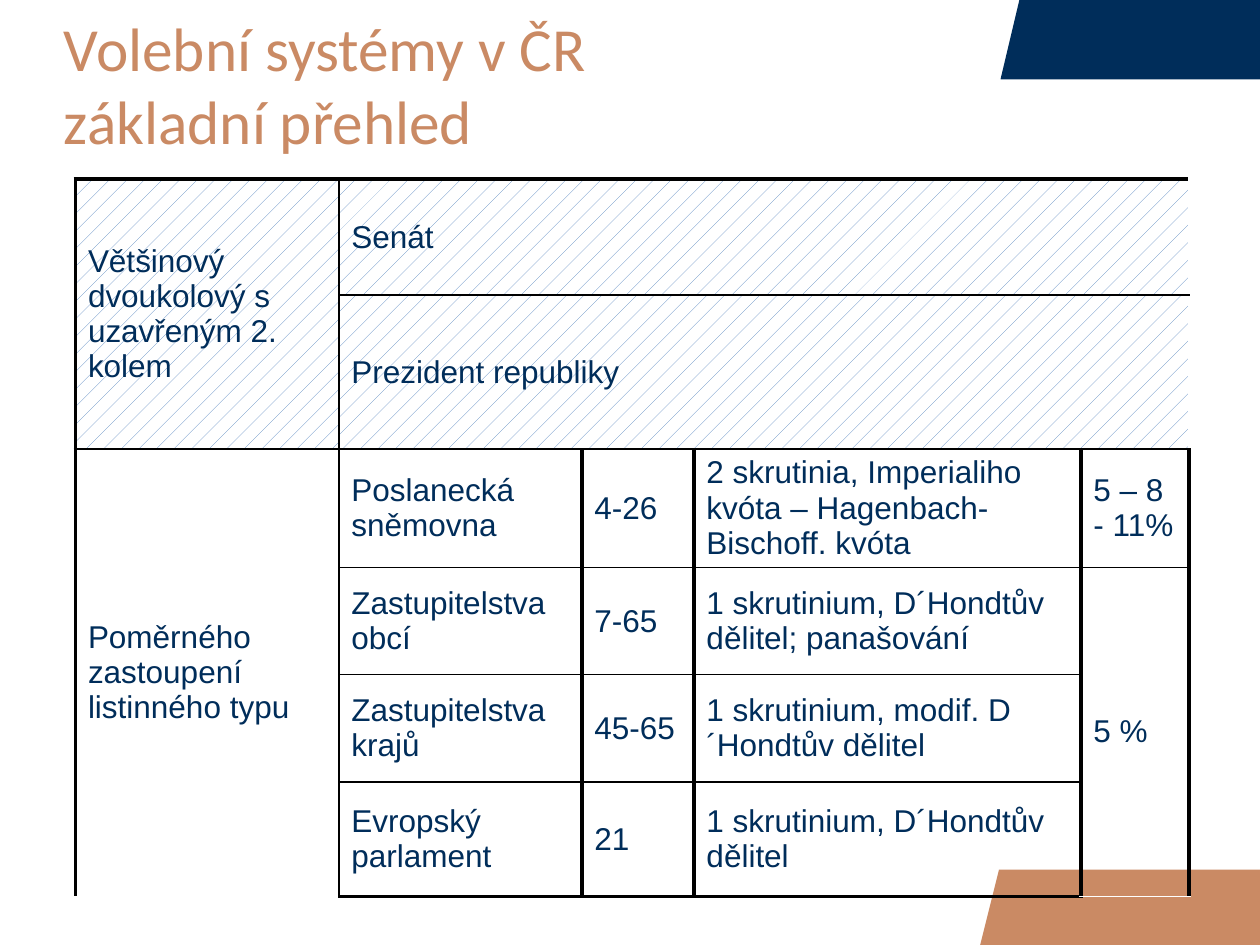
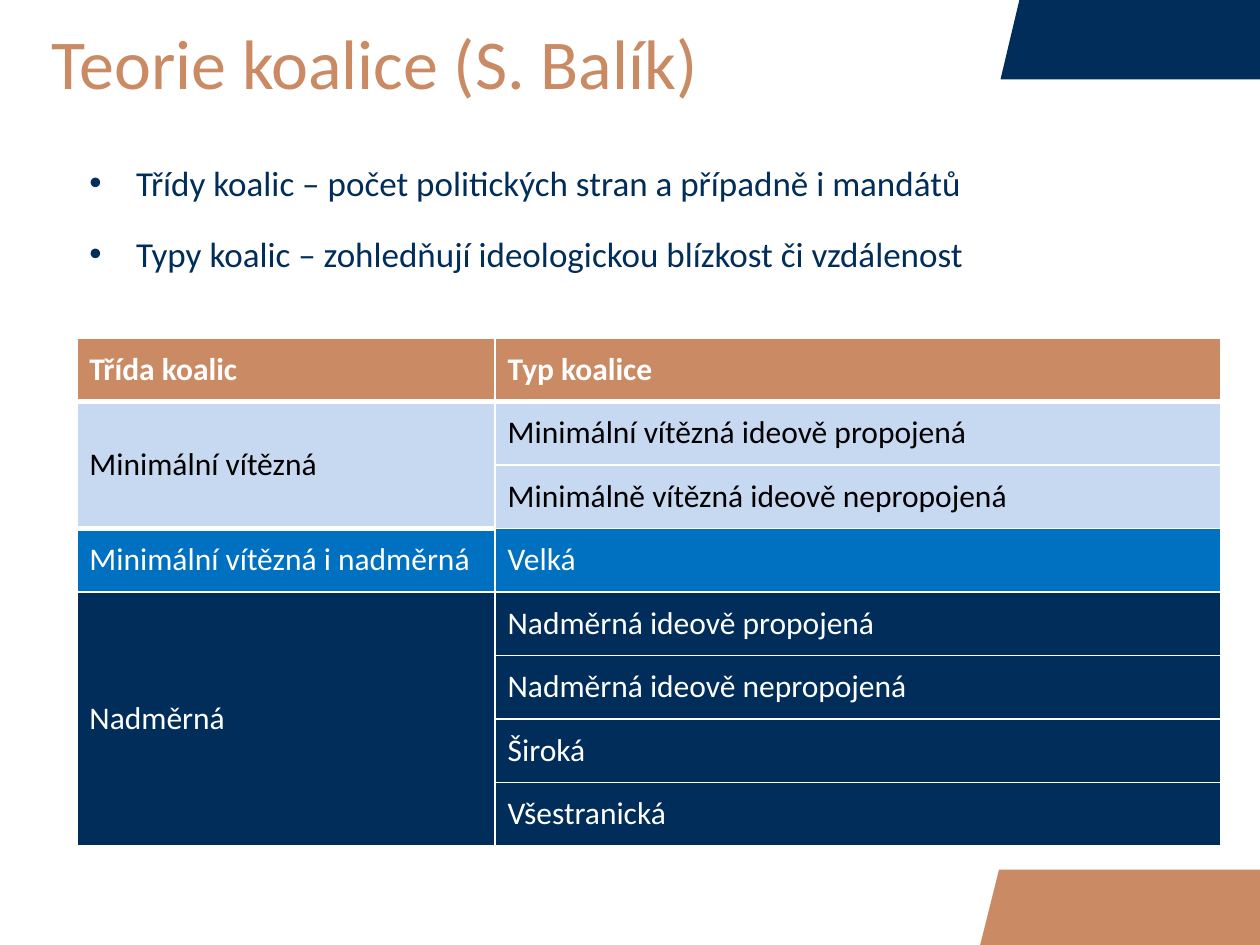
import itertools

import pptx
import pptx.dml.color
import pptx.enum.dml
import pptx.enum.text
import pptx.oxml
import pptx.oxml.ns
import pptx.util
from pptx.dml.color import RGBColor
from pptx.util import Cm, Pt

NAVY = RGBColor(0x00, 0x2D, 0x5A)
COPPER = RGBColor(0xCA, 0x8A, 0x64)
BLUE = RGBColor(0x00, 0x70, 0xC0)
PALE_BLUE = RGBColor(0xC6, 0xD9, 0xF1)
HATCH_BLUE = RGBColor(0x4F, 0x81, 0xBD)
BLACK = RGBColor(0, 0, 0)
WHITE = RGBColor(255, 255, 255)

SLIDE_WIDTH, SLIDE_HEIGHT = 25.4, 19.05
TITLE_ONLY, TITLE_AND_CONTENT = 5, 1

# Corner bands: colour and outline in centimetres
BANDS = [
    (NAVY, [(20.17, 1.6), (20.55, 0), (SLIDE_WIDTH, 0), (SLIDE_WIDTH, 1.6)]),
    (COPPER, [(19.76, SLIDE_HEIGHT), (20.14, 17.53),
              (SLIDE_WIDTH, 17.53), (SLIDE_WIDTH, SLIDE_HEIGHT)]),
]

# In the tables None marks a cell covered by a span; spans give (rows, columns).
# Border weights are listed per grid line, from left or from top.
ELECTIONS = {
    "rows": [
        ["Většinový dvoukolový s uzavřeným 2. kolem", "Senát", None, None, None],
        [None, "Prezident republiky", None, None, None],
        ["Poměrného zastoupení listinného typu", "Poslanecká sněmovna", "4-26",
         "2 skrutinia, Imperialiho kvóta – Hagenbach-Bischoff. kvóta", "5 – 8 - 11%"],
        [None, "Zastupitelstva obcí", "7-65",
         "1 skrutinium, D´Hondtův dělitel; panašování", "5 %"],
        [None, "Zastupitelstva krajů", "45-65",
         "1 skrutinium, modif. D´Hondtův dělitel", None],
        [None, "Evropský parlament", "21", "1 skrutinium, D´Hondtův dělitel", None],
    ],
    "spans": {(0, 0): (2, 1), (0, 1): (1, 4), (1, 1): (1, 4), (2, 0): (4, 1), (3, 4): (3, 1)},
    "position": (1.52, 3.61),
    "widths": [5.31, 4.9, 2.26, 7.8, 2.18],
    "heights": [2.34, 3.1, 2.39, 2.16, 2.16, 2.31],
    "border": BLACK,
    "vertical_weights": [2.25, 1] + [2.25] * 4,
    "horizontal_weights": [2.25] + [1] * 5 + [2.25],
    "font": "Arial",
    "row_styles": [("hatched", NAVY)] * 2 + [(None, NAVY)] * 4,
    "header": False,
}

COALITIONS = {
    "rows": [
        ["Třída koalic", "Typ koalice"],
        ["Minimální vítězná", "Minimální vítězná ideově propojená"],
        [None, "Minimálně vítězná ideově nepropojená"],
        ["Minimální vítězná i nadměrná", "Velká"],
        ["Nadměrná", "Nadměrná ideově propojená"],
        [None, "Nadměrná ideově nepropojená"],
        [None, "Široká"],
        [None, "Všestranická"],
    ],
    "spans": {(1, 0): (2, 1), (4, 0): (4, 1)},
    "position": (1.55, 6.81),
    "widths": [8.43, 14.63],
    "heights": [1.28] * 8,
    "border": WHITE,
    "vertical_weights": [1] * 3,
    "horizontal_weights": [1, 3] + [1] * 7,
    "font": "Calibri",
    "row_styles": [(COPPER, WHITE)] + [(PALE_BLUE, BLACK)] * 2 + [(BLUE, WHITE)]
                  + [(NAVY, WHITE)] * 4,
    "header": True,
}

COALITION_POINTS = [
    "Třídy koalic – počet politických stran a případně i mandátů",
    "Typy koalic – zohledňují ideologickou blízkost či vzdálenost",
]


def set_font(paragraph, name, size, color, bold=False):
    paragraph.font.name = name
    paragraph.font.size = Pt(size)
    paragraph.font.color.rgb = color
    paragraph.font.bold = bold


def place(shape, left, top, width, height):
    shape.left, shape.top = Cm(left), Cm(top)
    shape.width, shape.height = Cm(width), Cm(height)


def add_bands(presentation, slide):
    """Draw the bands on a slide and move them to the master, for all slides."""
    for color, points in BANDS:
        corners = [(Cm(x), Cm(y)) for x, y in points]
        builder = slide.shapes.build_freeform(*corners[0])
        builder.add_line_segments(corners[1:], close=True)
        band = builder.convert_to_shape()
        band.shadow.inherit = False
        band.fill.solid()
        band.fill.fore_color.rgb = color
        band.line.fill.background()
        presentation.slide_master.shapes.element.append(band.element)


def set_title(slide, text, size, left, top, height):
    title = slide.shapes.title
    place(title, left, top, 23.47, height)
    frame = title.text_frame
    frame.text = text
    frame.auto_size = pptx.enum.text.MSO_AUTO_SIZE.NONE
    frame.vertical_anchor = pptx.enum.text.MSO_ANCHOR.MIDDLE
    frame.margin_left = frame.margin_right = Cm(0.71)
    paragraph = frame.paragraphs[0]
    paragraph.alignment = pptx.enum.text.PP_ALIGN.LEFT
    set_font(paragraph, "Calibri", size, COPPER)


def set_bullets(slide, points):
    body = slide.placeholders[1]
    place(body, 1.55, 2.95, 22.58, 15.09)
    frame = body.text_frame
    frame.text = "\n".join(points)
    frame.auto_size = pptx.enum.text.MSO_AUTO_SIZE.NONE
    for index, paragraph in enumerate(frame.paragraphs):
        properties = paragraph._p.get_or_add_pPr()
        properties.set("marL", str(Cm(0.94)))
        properties.set("indent", str(-Cm(0.94)))
        paragraph.line_spacing = 1.2
        paragraph.space_before = Pt(12 if index else 0)
        set_font(paragraph, "Calibri", 20, NAVY)


def add_border(cell, edge, color, weight):
    line = pptx.oxml.parse_xml(
        f'<a:ln{edge} {pptx.oxml.ns.nsdecls("a")} w="{Pt(weight)}">'
        f'<a:solidFill><a:srgbClr val="{color}"/></a:solidFill></a:ln{edge}>')
    cell._tc.get_or_add_tcPr().append(line)


def fill_cell(cell, fill):
    if fill is None:
        cell.fill.background()
    elif fill == "hatched":
        cell.fill.patterned()
        cell.fill.pattern = pptx.enum.dml.MSO_PATTERN.PERCENT_5
        cell.fill.fore_color.rgb = HATCH_BLUE
        cell.fill.back_color.rgb = WHITE
    else:
        cell.fill.solid()
        cell.fill.fore_color.rgb = fill


def add_table(slide, content):
    rows, widths, heights = content["rows"], content["widths"], content["heights"]
    left, top = content["position"]
    table = slide.shapes.add_table(len(rows), len(widths), Cm(left), Cm(top),
                                   Cm(sum(widths)), Cm(sum(heights))).table
    table.first_row = content["header"]
    table.horz_banding = False
    for column, width in zip(table.columns, widths):
        column.width = Cm(width)
    for row, height in zip(table.rows, heights):
        row.height = Cm(height)

    for row, column in itertools.product(range(len(rows)), range(len(widths))):
        if rows[row][column] is None:
            continue
        row_span, column_span = content["spans"].get((row, column), (1, 1))
        bottom, right = row + row_span, column + column_span
        cell = table.cell(row, column)
        if (row_span, column_span) != (1, 1):
            cell.merge(table.cell(bottom - 1, right - 1))
        fill, color = content["row_styles"][row]
        cell.text = rows[row][column]
        cell.vertical_anchor = pptx.enum.text.MSO_ANCHOR.MIDDLE
        set_font(cell.text_frame.paragraphs[0], content["font"], 18, color,
                 bold=content["header"] and row == 0)

        # Only the outer edges of a merged area get a border
        vertical, horizontal = content["vertical_weights"], content["horizontal_weights"]
        for part_row, part_column in itertools.product(range(row, bottom), range(column, right)):
            part = table.cell(part_row, part_column)
            edges = [
                ("L", part_column == column, vertical[column]),
                ("R", part_column == right - 1, vertical[right]),
                ("T", part_row == row, horizontal[row]),
                ("B", part_row == bottom - 1, horizontal[bottom]),
            ]
            for edge, is_outer, weight in edges:
                if is_outer:
                    add_border(part, edge, content["border"], weight)
            fill_cell(part, fill)


def main():
    presentation = pptx.Presentation()
    presentation.slide_width = Cm(SLIDE_WIDTH)
    presentation.slide_height = Cm(SLIDE_HEIGHT)
    layouts = presentation.slide_layouts

    elections = presentation.slides.add_slide(layouts[TITLE_ONLY])
    add_bands(presentation, elections)
    set_title(elections, "Volební systémy v ČR\vzákladní přehled", 35, 0.58, 1.12, 1.12)
    add_table(elections, ELECTIONS)

    coalitions = presentation.slides.add_slide(layouts[TITLE_AND_CONTENT])
    set_title(coalitions, "Teorie koalice (S. Balík)", 40, 0.33, 0.64, 1.22)
    set_bullets(coalitions, COALITION_POINTS)
    add_table(coalitions, COALITIONS)

    presentation.save("out.pptx")


if __name__ == "__main__":
    main()
